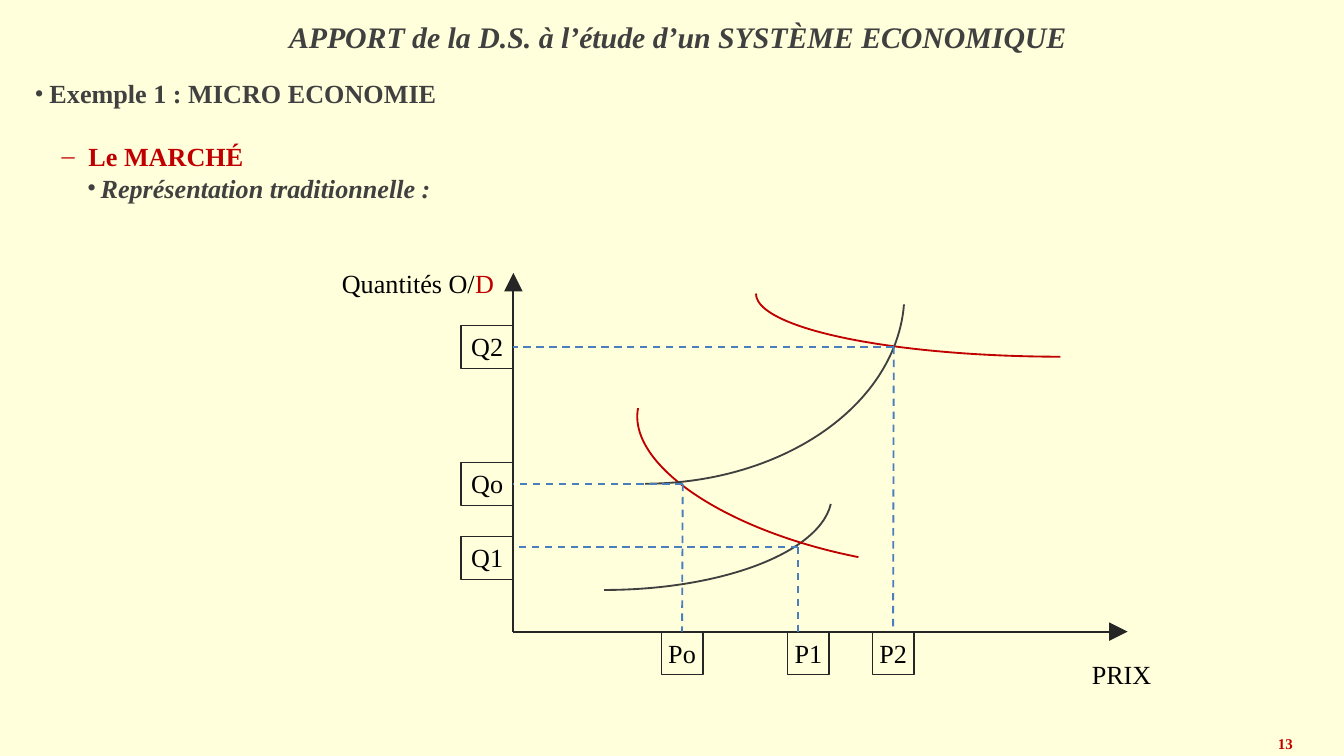
import pptx
import pptx.util
import pptx.dml.color
import pptx.enum.dml
import pptx.enum.shapes
import pptx.enum.text
import pptx.oxml.ns
from lxml import etree

Inches = pptx.util.Inches
Pt = pptx.util.Pt
RGBColor = pptx.dml.color.RGBColor
PP_ALIGN = pptx.enum.text.PP_ALIGN
MSO_ANCHOR = pptx.enum.text.MSO_ANCHOR
MSO_SHAPE = pptx.enum.shapes.MSO_SHAPE
qn = pptx.oxml.ns.qn

CREAM = RGBColor(0xFF, 0xFF, 0xDC)
GREY = RGBColor(0x40, 0x40, 0x40)
DARK = RGBColor(0x26, 0x26, 0x26)
BLACK = RGBColor(0, 0, 0)
RED = RGBColor(0xC0, 0, 0)
BLUE = RGBColor(0x4B, 0x7E, 0xBC)
FONT = "Times New Roman"


def add_run(p, text, size, color, bold=False, italic=False):
    """Append one styled run to a paragraph."""
    r = p.add_run()
    r.text = text
    r.font.name, r.font.size = FONT, Pt(size)
    r.font.bold, r.font.italic = bold, italic
    r.font.color.rgb = color


def set_frame(tf, inset, wrap, anchor=MSO_ANCHOR.TOP):
    """Set margins, wrapping and anchor, and centre the first paragraph."""
    tf.margin_left = tf.margin_right = Inches(inset)
    tf.margin_top = tf.margin_bottom = Inches(inset)
    tf.word_wrap, tf.vertical_anchor = wrap, anchor
    tf.paragraphs[0].alignment = PP_ALIGN.CENTER
    return tf.paragraphs[0]


def add_text(slide, box, inset=0.04, wrap=False, anchor=MSO_ANCHOR.TOP):
    """Add a centred text box and return its first paragraph."""
    s = slide.shapes.add_textbox(*map(Inches, box))
    return set_frame(s.text_frame, inset, wrap, anchor)


def add_line(slide, x1, y1, x2, y2, color, dashed=False, arrow=False):
    """Add a straight line, dashed or with an arrowhead if asked."""
    s = slide.shapes.add_connector(pptx.enum.shapes.MSO_CONNECTOR.STRAIGHT,
                                   *map(Inches, (x1, y1, x2, y2)))
    s.line.color.rgb, s.line.width = color, Pt(1)
    if dashed:
        s.line.dash_style = pptx.enum.dml.MSO_LINE.DASH
    if arrow:
        etree.SubElement(s._element.spPr.find(qn("a:ln")), qn("a:tailEnd"),
                         type="triangle", w="lg", len="lg")
    etree.SubElement(s._element.spPr, qn("a:effectLst"))
    return s


def add_outline_shape(slide, kind, box, color, width):
    """Add an unfilled preset shape with a plain outline."""
    s = slide.shapes.add_shape(kind, *map(Inches, box))
    s.shadow.inherit = False
    s.fill.background()
    s.line.color.rgb, s.line.width = color, Pt(width)
    return s


def add_curve(slide, box, color, rotation=0):
    """Add a supply or demand curve as a flipped quarter arc."""
    s = add_outline_shape(slide, MSO_SHAPE.ARC, box, color, 1)
    s.adjustments[0], s.adjustments[1] = 162, 214.57
    s._element.spPr.find(qn("a:xfrm")).set("flipV", "1")
    s.rotation = rotation


def add_label(slide, text, box):
    """Add a framed axis label."""
    s = add_outline_shape(slide, MSO_SHAPE.RECTANGLE, box, DARK, 0.75)
    add_run(set_frame(s.text_frame, 0.04, False), text, 14, BLACK)
    return s


def add_bullets(slide, box):
    """Add the indented outline above the graph."""
    s = slide.shapes.add_textbox(*map(Inches, box))
    tf = s.text_frame
    tf.word_wrap = True
    items = [
        ("Exemple 1 : MICRO ECONOMIE", "•", 0, 0.11, 0.11, 1, GREY, False),
        ("Le MARCHÉ", "–", 1, 0.4, 0.2, 16.6, RED, False),
        ("Représentation traditionnelle :", "•", 2, 0.49, 0.1, 0.5, GREY, True),
    ]
    for i, (text, mark, level, margin, hang, before, color, italic) in enumerate(items):
        p = tf.add_paragraph() if i else tf.paragraphs[0]
        p.level, p.space_before = level, Pt(before)
        pPr = p._p.get_or_add_pPr()
        pPr.set("marL", str(Inches(margin)))
        pPr.set("indent", str(-Inches(hang)))
        etree.SubElement(pPr, qn("a:buFont"), typeface=FONT)
        etree.SubElement(pPr, qn("a:buChar"), char=mark)
        add_run(p, text, 14, color, True, italic)


def add_market_graph(slide, box):
    """Draw the price and quantity graph inside the box."""
    left, top, width, height = box
    x0, y0 = left + 1.34, top + 2.75
    add_line(slide, x0, y0, x0, top + 0.08, DARK, arrow=True)
    add_line(slide, x0, y0, left + width - 0.23, y0, DARK, arrow=True)

    p = add_text(slide, (left + width - 0.55, top + height - 0.32, 0.55, 0.32))
    add_run(p, "PRIX", 14, BLACK)
    p = add_text(slide, (left, top, 1.26, 0.32))
    add_run(p, "Quantités O/", 14, BLACK)
    add_run(p, "D", 14, RED)

    curves = [
        (0.32, 1.02, 3.39, 1.42, GREY, 0),
        (4.96, -2.05, 0.94, 4.57, RED, 90),
        (3.3, -0.42, 1.57, 3.7, RED, 100.7),
        (0.39, -1.18, 3.86, 2.83, GREY, 0),
    ]
    for dx, dy, w, h, color, rotation in curves:
        add_curve(slide, (left + dx, top + dy, w, h), color, rotation)

    equilibria = [
        ("o", 1.26, 1.1, 1.26, 1.1),
        ("1", 2.12, 0.63, 2.2, 0.55),
        ("2", 2.83, 2.12, 2.83, 2.12),
    ]
    for name, price, quantity, price_mid, quantity_mid in equilibria:
        x, y = x0 + price, y0 - quantity
        price_box = add_label(slide, "P" + name, (x0 + price_mid - 0.16, y0, 0.31, 0.32))
        quantity_box = add_label(slide, "Q" + name,
                                 (x0 - 0.39, y0 - quantity_mid - 0.16, 0.39, 0.32))
        down = add_line(slide, x, y, x, y0, BLUE, dashed=True)
        across = add_line(slide, x, y, x0, y, BLUE, dashed=True)
        if price == price_mid:
            down.end_connect(price_box, 0)
        if quantity == quantity_mid:
            across.end_connect(quantity_box, 3)


def add_title(slide, box):
    """Add the centred slide title."""
    p = add_text(slide, box, 0, True, MSO_ANCHOR.MIDDLE)
    add_run(p, "APPORT de la D.S. à l’étude d’un SYSTÈME ECONOMIQUE", 16, GREY, True, True)


def add_page_number(slide, box):
    """Add the page number."""
    p = add_text(slide, box, 0, True, MSO_ANCHOR.MIDDLE)
    add_run(p, "13", 8, RED, True)


def main():
    """Build and save the slide."""
    prs = pptx.Presentation()
    prs.slide_width = Inches(10)
    prs.slide_height = prs.slide_width * 9 // 16
    slide = prs.slides.add_slide(prs.slide_layouts[6])
    slide.background.fill.solid()
    slide.background.fill.fore_color.rgb = CREAM
    add_title(slide, (0.2, 0.14, 9.69, 0.27))
    add_bullets(slide, (0.16, 0.53, 9.69, 4.88))
    add_market_graph(slide, (2.48, 1.95, 6.14, 3.23))
    add_page_number(slide, (9.33, 5.44, 0.47, 0.18))
    prs.save("out.pptx")


if __name__ == "__main__":
    main()
